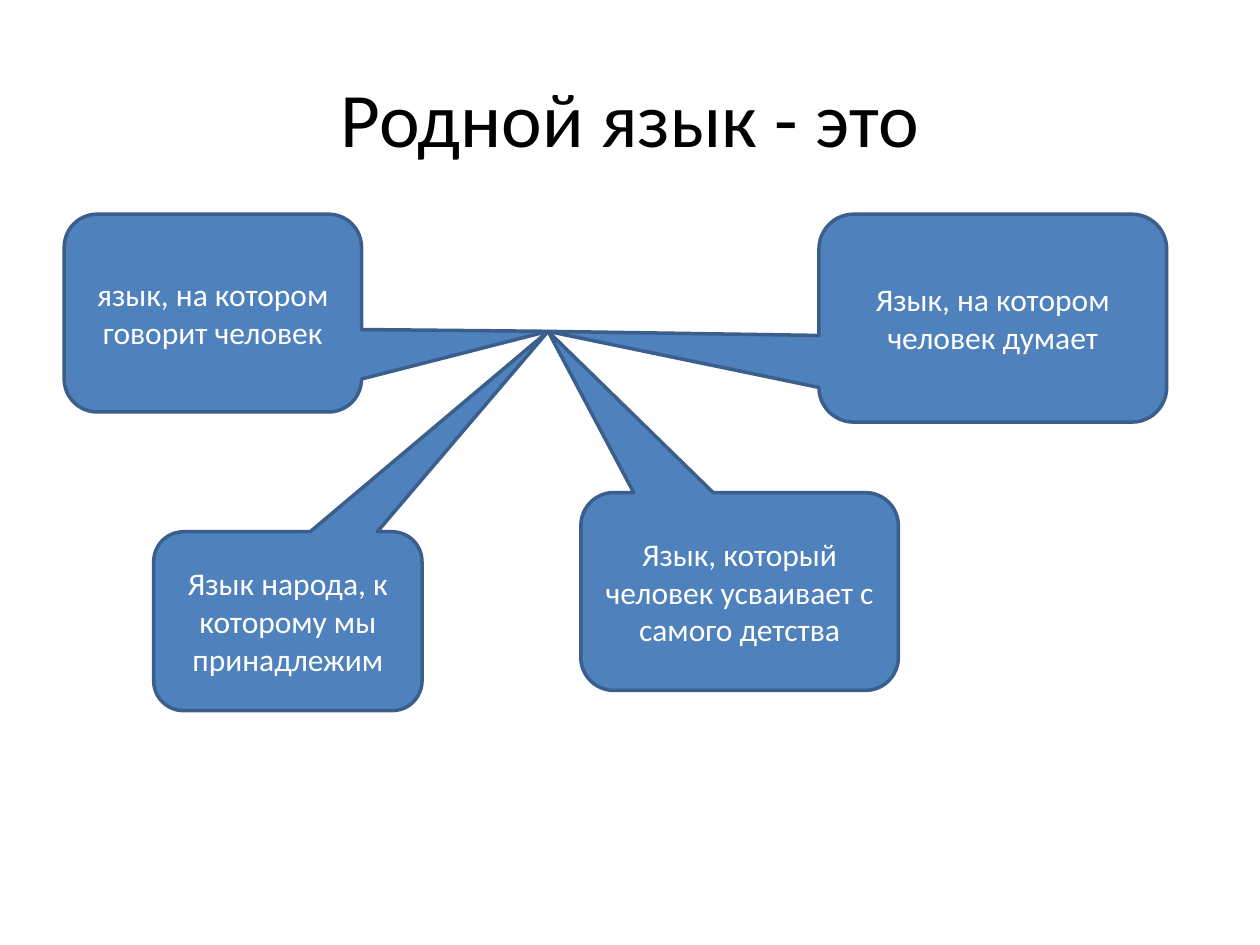
import pptx
import pptx.util
import pptx.dml.color
import pptx.enum.shapes
import pptx.enum.text

Inches = pptx.util.Inches

COLORS = {"title": "000000", "fill": "4F81BD", "line": "3A5F8C", "text": "FFFFFF"}
FONT = "Calibri"
# All callouts point at this common spot
TIP = (4.35, 2.63)


class SlideBuilder:
    """Holds the style and the current slide."""

    def __init__(self, page):
        self.page = page

    def color(self, name):
        return pptx.dml.color.RGBColor.from_string(COLORS[name])

    def set_text(self, shape, text, size, color):
        frame = shape.text_frame
        frame.text = text
        frame.word_wrap = True
        frame.vertical_anchor = pptx.enum.text.MSO_ANCHOR.MIDDLE
        for para in frame.paragraphs:
            para.alignment = pptx.enum.text.PP_ALIGN.CENTER
            for span in para.runs:
                span.font.name = FONT
                span.font.size = pptx.util.Pt(size)
                span.font.color.rgb = self.color(color)

    def title(self, text, left, top, width, height):
        box = self.page.shapes.title
        box.left, box.top = Inches(left), Inches(top)
        box.width, box.height = Inches(width), Inches(height)
        self.set_text(box, text, 44, "title")

    def callout(self, text, left, top, width, height):
        box = self.page.shapes.add_shape(
            pptx.enum.shapes.MSO_SHAPE.ROUNDED_RECTANGULAR_CALLOUT,
            Inches(left), Inches(top), Inches(width), Inches(height))
        # The tip is measured from the centre, as a share of the size
        box.adjustments[0] = (TIP[0] - left) / width - 0.5
        box.adjustments[1] = (TIP[1] - top) / height - 0.5
        box.shadow.inherit = False
        box.fill.solid()
        box.fill.fore_color.rgb = self.color("fill")
        box.line.color.rgb = self.color("line")
        box.line.width = pptx.util.Pt(2)
        self.set_text(box, text, 18, "text")


def main():
    deck = pptx.Presentation()
    deck.slide_width, deck.slide_height = Inches(10), Inches(7.5)
    # Layout 5 is "Title Only"
    builder = SlideBuilder(deck.slides.add_slide(deck.slide_layouts[5]))

    # Title
    builder.title("Родной язык - это", 0.5, 0.3, 9, 1.25)

    # Definitions around the common point
    definitions = [
        ("язык, на котором говорит человек", 0.51, 1.7, 2.36, 1.57),
        ("Язык, на котором человек думает", 6.5, 1.7, 2.76, 1.65),
        ("Язык, который человек усваивает с самого детства", 4.61, 3.91, 2.52, 1.57),
        ("Язык народа, к которому мы принадлежим", 1.22, 4.22, 2.13, 1.42),
    ]
    for definition in definitions:
        builder.callout(*definition)

    deck.save("out.pptx")


if __name__ == "__main__":
    main()
